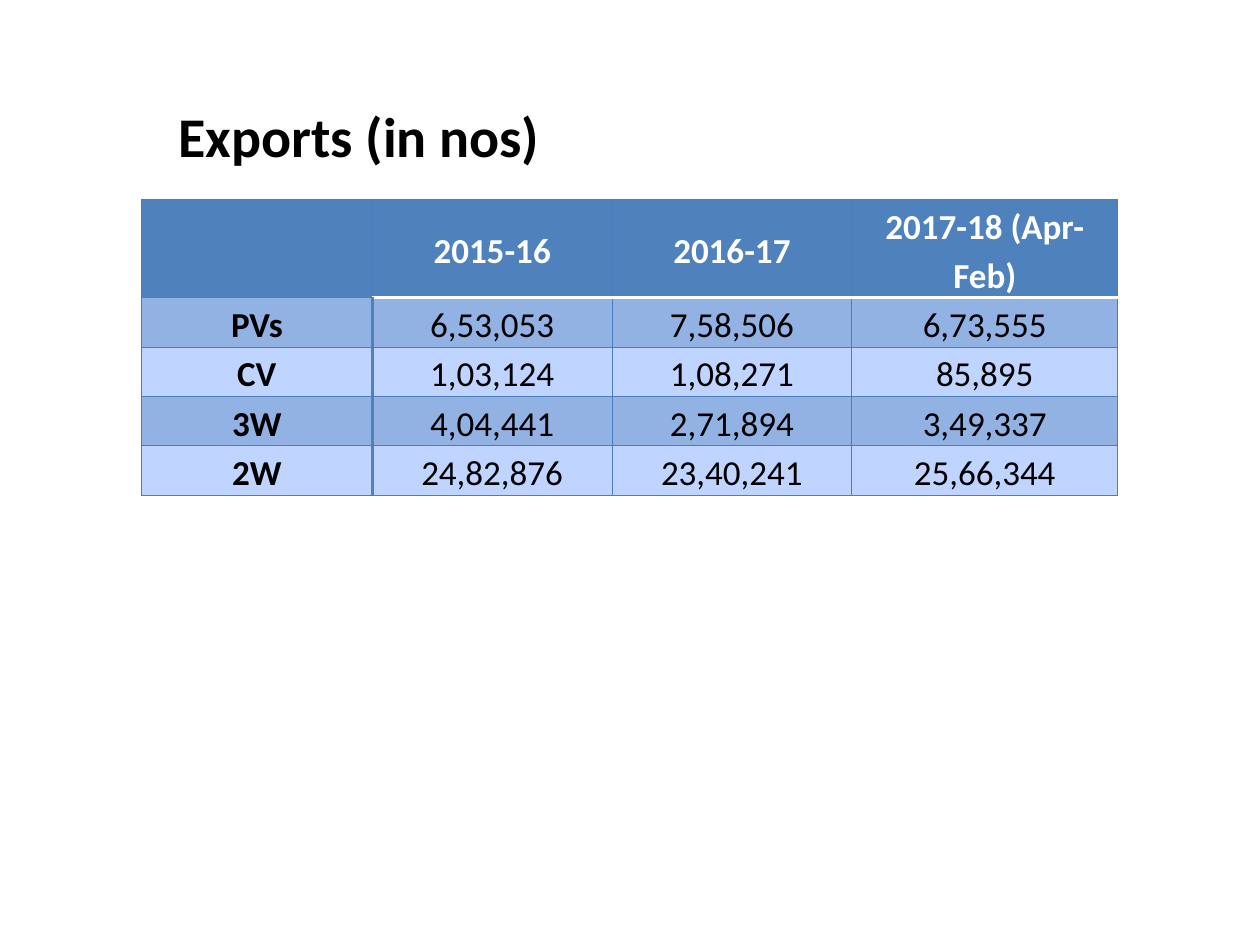
from lxml.etree import SubElement
from pptx import Presentation
from pptx.dml.color import RGBColor
from pptx.enum.text import MSO_ANCHOR as Anchor, PP_ALIGN as Align
from pptx.oxml.ns import qn
from pptx.util import Pt

COLORS = {
    "header": "4F81BD", "dark_band": "93B2E4", "light_band": "BFD4FF",
    "grid": "4B7EBC", "white": "FFFFFF", "black": "000000",
}


def format_text(paragraph, size, color, bold):
    paragraph.alignment = Align.CENTER
    font = paragraph.font
    for name, value in {"name": "Calibri", "size": Pt(size), "bold": bold}.items():
        setattr(font, name, value)
    font.color.rgb = RGBColor.from_string(COLORS[color])


def add_border(cell, side, color, width):
    properties = cell._tc.get_or_add_tcPr()
    line = SubElement(properties, qn(f"a:ln{side}"), w=str(Pt(width)))
    fill = SubElement(line, qn("a:solidFill"))
    SubElement(fill, qn("a:srgbClr"), val=COLORS[color])


presentation = Presentation()
presentation.slide_width, presentation.slide_height = Pt(720), Pt(540)
slide = presentation.slides.add_slide(presentation.slide_layouts[6])

# Export table
rows = [
    ["", "2015-16", "2016-17", "2017-18 (Apr-Feb)"],
    ["PVs", "6,53,053", "7,58,506", "6,73,555"],
    ["CV", "1,03,124", "1,08,271", "85,895"],
    ["3W", "4,04,441", "2,71,894", "3,49,337"],
    ["2W", "24,82,876", "23,40,241", "25,66,344"],
]
column_widths = [132, 137, 137, 152]
row_heights = [56.4] + [28.2] * 4
table = slide.shapes.add_table(
    len(rows), len(column_widths), Pt(80.8), Pt(113.8),
    Pt(sum(column_widths)), Pt(sum(row_heights))).table
for column, width in zip(table.columns, column_widths):
    column.width = Pt(width)
for row, height in zip(table.rows, row_heights):
    row.height = Pt(height)

cell_format = {
    "vertical_anchor": Anchor.MIDDLE, "margin_left": Pt(5.4),
    "margin_right": Pt(5.4), "margin_top": 0, "margin_bottom": 0,
}
for r, values in enumerate(rows):
    for c, value in enumerate(values):
        cell = table.cell(r, c)
        for name, setting in cell_format.items():
            setattr(cell, name, setting)
        cell.text = value
        paragraph = cell.text_frame.paragraphs[0]
        paragraph.line_spacing = 1.15
        format_text(paragraph, 20, "white" if r == 0 else "black", r == 0 or c == 0)

        # Thick rules set off the header row and the label column
        borders = {side: ("grid", 0.75) for side in "LRTB"}
        if r > 0 and c < 2:
            borders["R" if c == 0 else "L"] = ("header", 2)
        if r < 2 and c > 0:
            borders["B" if r == 0 else "T"] = ("white", 2)
        for side, (color, width) in borders.items():
            add_border(cell, side, color, width)

        band = "header" if r == 0 else "dark_band" if r % 2 else "light_band"
        cell.fill.solid()
        cell.fill.fore_color.rgb = RGBColor.from_string(COLORS[band])

# Title
title = slide.shapes.add_textbox(Pt(93.6), Pt(54), Pt(223.2), Pt(46))
frame = title.text_frame
frame.word_wrap = False
frame.vertical_anchor = Anchor.MIDDLE
frame.text = "Exports (in nos)"
format_text(frame.paragraphs[0], 32, "black", True)

presentation.save("out.pptx")
